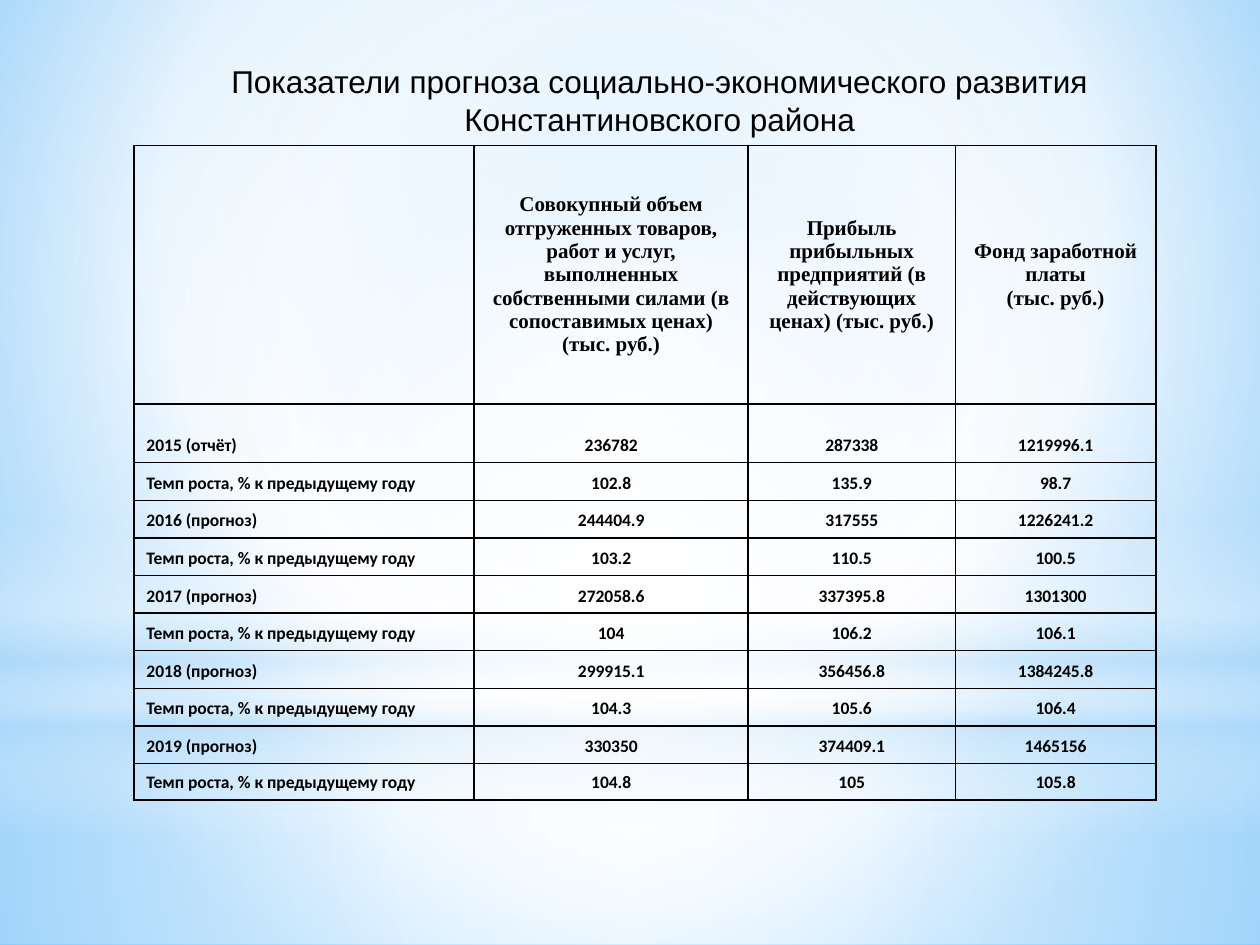
"""Build a slide with a table of district development forecast indicators."""
from lxml import etree
from pptx import Presentation
from pptx.dml.color import RGBColor
from pptx.enum.shapes import MSO_SHAPE
from pptx.enum.text import MSO_ANCHOR, MSO_AUTO_SIZE, PP_ALIGN
from pptx.oxml.ns import qn
from pptx.util import Pt

RECTANGLE, OVAL = MSO_SHAPE.RECTANGLE, MSO_SHAPE.OVAL
TOP, MIDDLE, BOTTOM = MSO_ANCHOR.TOP, MSO_ANCHOR.MIDDLE, MSO_ANCHOR.BOTTOM
CENTER, LEFT = PP_ALIGN.CENTER, PP_ALIGN.LEFT
FIT_SHAPE = MSO_AUTO_SIZE.SHAPE_TO_FIT_TEXT

COLORS = {"black": "000000", "white": "FFFFFF", "pale": "B4DCFA",
          "sky": "9ED5FF", "blue": "5BB9FF"}

TITLE = "Показатели прогноза социально-экономического развития Константиновского района"
HEADERS = [
    "",
    "Совокупный объем отгруженных товаров, работ и услуг, выполненных "
    "собственными силами (в сопоставимых ценах) (тыс. руб.)",
    "Прибыль прибыльных предприятий (в действующих ценах) (тыс. руб.)",
    "Фонд заработной платы\n(тыс. руб.)",
]
GROWTH = "Темп роста, % к предыдущему году"
YEARS = [
    ("2015 (отчёт)", ("236782", "287338", "1219996.1"), ("102.8", "135.9", "98.7")),
    ("2016 (прогноз)", ("244404.9", "317555", "1226241.2"), ("103.2", "110.5", "100.5")),
    ("2017 (прогноз)", ("272058.6", "337395.8", "1301300"), ("104", "106.2", "106.1")),
    ("2018 (прогноз)", ("299915.1", "356456.8", "1384245.8"), ("104.3", "105.6", "106.4")),
    ("2019 (прогноз)", ("330350", "374409.1", "1465156"), ("104.8", "105", "105.8")),
]

WIDTH, HEIGHT = 720, 540
TABLE_LEFT, TABLE_TOP = 76.5, 83
COLUMN_WIDTHS = [194.5, 156.5, 118.5, 114.5]
ROW_HEIGHTS = [148, 33.4] + [21.5] * 8 + [20.8]

# Gradient stops are (position %, colour, opacity %); a focus of None is a vertical run.
CENTRE = (50, 50, 50, 50)
BACKDROP = ([(0, "sky", 100), (60, "white", 100), (100, "blue", 100)], (20, 10, 20, 60))
GLOWS = [
    (RECTANGLE, 402, 138, [(0, "white", 91), (37, "white", 76), (100, "pale", 79)], CENTRE),
    (RECTANGLE, 0, 402, [(0, "white", 89), (48, "white", 62), (100, "pale", 79)], CENTRE),
    (RECTANGLE, 297, 180, [(0, "white", 0), (29, "white", 30), (45, "pale", 40),
                           (55, "white", 26), (65, "pale", 60), (100, "white", 0)], None),
    (OVAL, 126, 402, [(0, "white", 100), (56, "white", 0)], CENTRE),
]


def add_node(parent, tag, **attributes):
    node = etree.SubElement(parent, qn(tag))
    for key, value in attributes.items():
        node.set(key, str(value))
    return node


def set_gradient(fill, owner, stops, focus):
    fill.gradient()
    gradient = owner.find(".//" + qn("a:gradFill"))
    for child in list(gradient):
        gradient.remove(child)
    stop_list = add_node(gradient, "a:gsLst")
    for position, color, opacity in stops:
        stop = add_node(stop_list, "a:gs", pos=position * 1000)
        tint = add_node(stop, "a:srgbClr", val=COLORS[color])
        if opacity < 100:
            add_node(tint, "a:alpha", val=opacity * 1000)
    if focus:
        circle = add_node(gradient, "a:path", path="circle")
        add_node(circle, "a:fillToRect",
                 **{side: share * 1000 for side, share in zip("ltrb", focus)})
    else:
        add_node(gradient, "a:lin", ang=90 * 60000, scaled=0)


def format_text(frame, font_name, size, bold, align, anchor):
    frame.word_wrap = True
    frame.vertical_anchor = anchor
    for paragraph in frame.paragraphs:
        paragraph.alignment = align
        for run in paragraph.runs:
            run.font.name, run.font.size, run.font.bold = font_name, Pt(size), bold
            run.font.color.rgb = RGBColor.from_string(COLORS["black"])


def add_borders(cell):
    properties = cell._tc.get_or_add_tcPr()
    for side in "LRTB":
        border = add_node(properties, "a:ln" + side, w=Pt(1))
        add_node(add_node(border, "a:solidFill"), "a:srgbClr", val=COLORS["black"])


def add_glows(slide):
    for outline, top, height, stops, focus in GLOWS:
        glow = slide.shapes.add_shape(outline, 0, Pt(top), Pt(WIDTH), Pt(height))
        glow.shadow.inherit = False
        glow.line.fill.background()
        set_gradient(glow.fill, glow._element, stops, focus)


def add_indicators(slide):
    rows = [HEADERS]
    for year, amounts, rates in YEARS:
        rows += [(year, *amounts), (GROWTH, *rates)]
    table = slide.shapes.add_table(
        len(rows), len(HEADERS), Pt(TABLE_LEFT), Pt(TABLE_TOP),
        Pt(sum(COLUMN_WIDTHS)), Pt(sum(ROW_HEIGHTS))).table
    table.first_row = table.horz_banding = False
    for column, width in zip(table.columns, COLUMN_WIDTHS):
        column.width = Pt(width)
    for r, (values, height) in enumerate(zip(rows, ROW_HEIGHTS)):
        table.rows[r].height = Pt(height)
        font_name, size, anchor = (
            ("Calibri", 10, BOTTOM) if r else ("Times New Roman", 12, MIDDLE))
        for c, value in enumerate(values):
            cell = table.cell(r, c)
            add_borders(cell)
            cell.fill.background()
            cell.text_frame.text = value
            format_text(cell.text_frame, font_name, size, True, CENTER if c else LEFT, anchor)
            cell.vertical_anchor = anchor


def place_title(slide):
    title = slide.shapes.title
    title.left, title.top, title.width, title.height = Pt(76.5), Pt(32), Pt(601), Pt(51)
    title.text_frame.text = TITLE
    format_text(title.text_frame, "Arial", 18, False, CENTER, TOP)
    title.text_frame.auto_size = FIT_SHAPE
    slide.shapes._spTree.append(title._element)


def main():
    presentation = Presentation()
    presentation.slide_width, presentation.slide_height = Pt(WIDTH), Pt(HEIGHT)
    slide = presentation.slides.add_slide(presentation.slide_layouts[5])
    set_gradient(slide.background.fill, slide._element, *BACKDROP)
    add_glows(slide)
    add_indicators(slide)
    place_title(slide)
    presentation.save("out.pptx")


if __name__ == "__main__":
    main()
